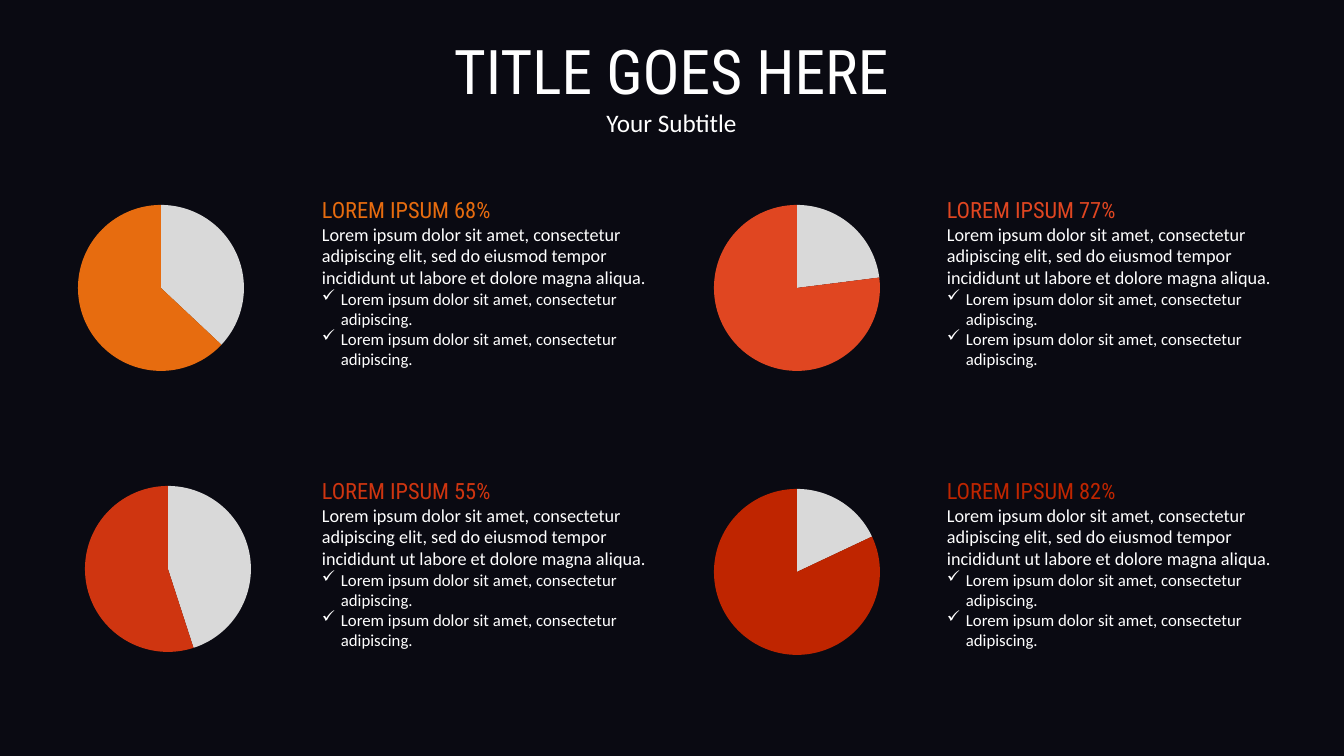
"""Build a dark slide with four pie charts and their captions."""
from pptx import Presentation
from pptx.chart.data import CategoryChartData as ChartData
from pptx.dml.color import RGBColor
from pptx.enum.chart import XL_CHART_TYPE as ChartType
from pptx.enum.text import MSO_AUTO_SIZE as AutoSize, PP_ALIGN as Align
from pptx.oxml import parse_xml
from pptx.oxml.ns import nsdecls, qn
from pptx.util import Pt

PX = 12192000 / 1344
HEADING_FONT, BODY_FONT = "Roboto Condensed", "Calibri"
NIGHT = RGBColor(0x0A, 0x0A, 0x12)
WHITE = RGBColor(0xFF, 0xFF, 0xFF)
BLACK = RGBColor(0x00, 0x00, 0x00)
GREY = RGBColor(0xD9, 0xD9, 0xD9)
AMBER = RGBColor(0xE7, 0x6C, 0x0F)
CORAL = RGBColor(0xE0, 0x46, 0x21)
BRICK = RGBColor(0xCF, 0x35, 0x10)
CRIMSON = RGBColor(0xBF, 0x25, 0x00)

SUMMARY = ("Lorem ipsum dolor sit amet, consectetur adipiscing elit, sed do "
           "eiusmod tempor incididunt ut labore et dolore magna aliqua.")
BULLET = "Lorem ipsum dolor sit amet, consectetur adipiscing."
COLUMNS, ROWS = (312, 937), (191, 472)
PIE_WIDTH, PIE_HEIGHT, PIE_DIAMETER = 302, 194, 166
PANELS = [
    (0, 0, "LOREM IPSUM 68%", 63, AMBER, (10, 191)),
    (1, 0, "LOREM IPSUM 77%", 77, CORAL, (646, 191)),
    (0, 1, "LOREM IPSUM 55%", 55, BRICK, (17, 472)),
    (1, 1, "LOREM IPSUM 82%", 82, CRIMSON, (646, 475)),
]


def px(*lengths):
    """Turn pixel lengths into EMU."""
    return [round(length * PX) for length in lengths]


def set_font(font, name, size, color):
    """Set the name, size and colour of a font."""
    font.name, font.size, font.color.rgb = name, Pt(size), color


def add_bullet(para):
    """Give a paragraph a check mark and a hanging indent."""
    properties = para._p.get_or_add_pPr()
    indent, = px(19)
    properties.set("marL", str(indent))
    properties.set("indent", str(-indent))
    properties.append(parse_xml(f'<a:buChar {nsdecls("a")} char="✓"/>'))


def add_text(page, bounds, lines, align=Align.LEFT):
    """Add a text box of (text, font, size, colour, bulleted) lines."""
    box = page.shapes.add_textbox(*px(*bounds))
    frame = box.text_frame
    frame.word_wrap = True
    frame.auto_size = AutoSize.SHAPE_TO_FIT_TEXT
    for index, (text, name, size, color, bulleted) in enumerate(lines):
        para = frame.add_paragraph() if index else frame.paragraphs[0]
        para.text = text
        para.alignment = align
        if bulleted:
            add_bullet(para)
        set_font(para.font, name, size, color)


def set_plot_layout(chart):
    """Centre the pie in its frame at the fixed diameter."""
    width, height = PIE_DIAMETER / PIE_WIDTH, PIE_DIAMETER / PIE_HEIGHT
    sizes = {"x": (1 - width) / 2, "y": (1 - height) / 2, "w": width, "h": height}
    modes = '<c:xMode val="edge"/><c:yMode val="edge"/>'
    values = "".join(f'<c:{key} val="{size:.3f}"/>' for key, size in sizes.items())
    plot_area = chart.element.find(".//" + qn("c:plotArea"))
    for layout in plot_area.findall(qn("c:layout")):
        plot_area.remove(layout)
    plot_area.insert(0, parse_xml(
        f'<c:layout {nsdecls("c")}><c:manualLayout><c:layoutTarget val="inner"/>'
        f'{modes}{values}</c:manualLayout></c:layout>'))


def add_pie(page, corner, share, color):
    """Add a pie with a grey remainder and a coloured share."""
    data = ChartData()
    data.categories = ["1", "2"]
    data.add_series("Series 1", (100 - share, share))
    bounds = px(*corner, PIE_WIDTH, PIE_HEIGHT)
    chart = page.shapes.add_chart(ChartType.PIE, *bounds, data).chart
    chart.has_legend = chart.has_title = False
    set_font(chart.font, BODY_FONT, 18, BLACK)
    plot = chart.plots[0]
    plot.vary_by_categories = True
    for index, slice_color in enumerate((GREY, color)):
        slice_format = plot.series[0].points[index].format
        slice_format.fill.solid()
        slice_format.fill.fore_color.rgb = slice_color
        slice_format.line.fill.background()
    set_plot_layout(chart)


def add_panel(page, column, row, heading, share, color, corner):
    """Add one pie together with its caption."""
    add_pie(page, corner, share, color)
    add_text(page, (COLUMNS[column], ROWS[row], 359, 188), [
        (heading, HEADING_FONT, 16, color, False),
        (SUMMARY, BODY_FONT, 13, WHITE, False),
        (BULLET, BODY_FONT, 12, WHITE, True),
        (BULLET, BODY_FONT, 12, WHITE, True),
    ])


def main():
    """Build and save the slide."""
    deck = Presentation()
    deck.slide_width, deck.slide_height = px(1344, 756)
    page = deck.slides.add_slide(deck.slide_layouts[6])
    page.background.fill.solid()
    page.background.fill.fore_color.rgb = NIGHT
    add_text(page, (368, 28, 607, 115), [
        ("TITLE GOES HERE", HEADING_FONT, 44, WHITE, False),
        ("Your Subtitle", BODY_FONT, 18, WHITE, False),
    ], Align.CENTER)
    for panel in PANELS:
        add_panel(page, *panel)
    deck.save("out.pptx")


if __name__ == "__main__":
    main()
